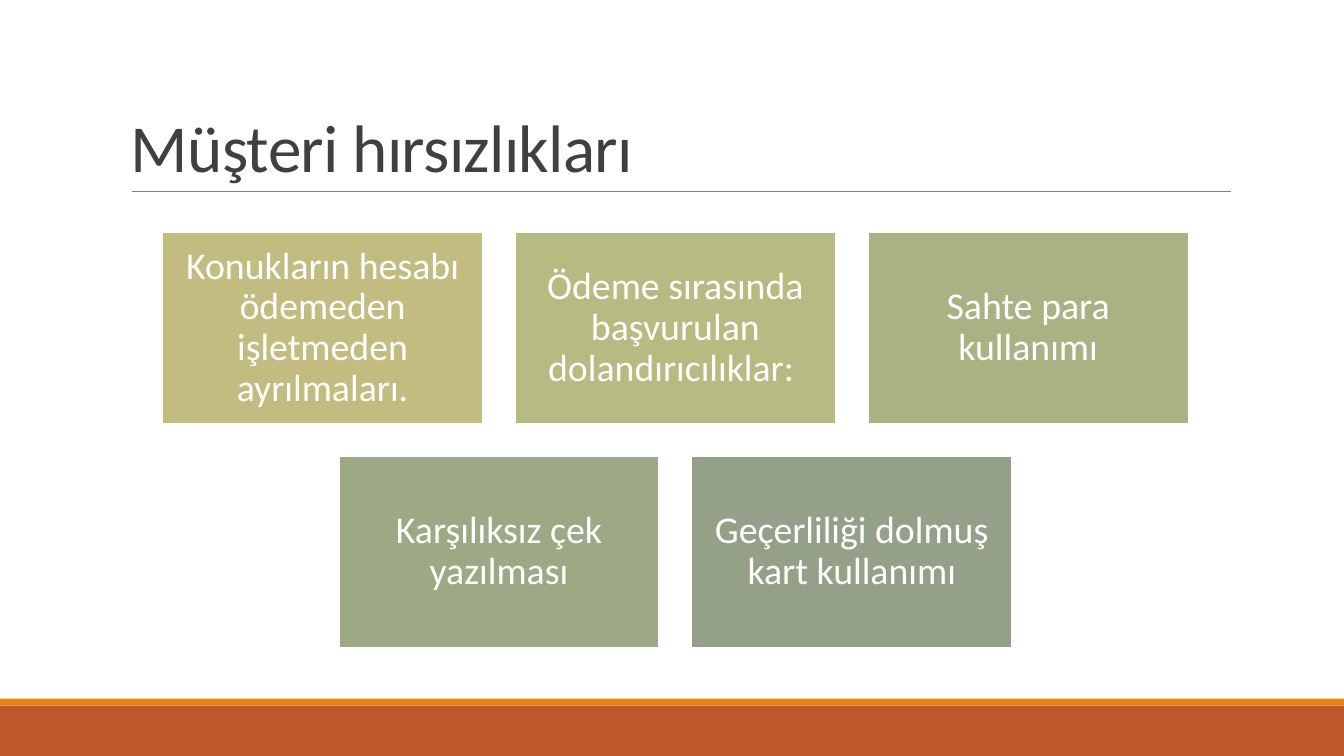
from pptx import Presentation
from pptx.dml.color import RGBColor
from pptx.enum.shapes import MSO_CONNECTOR, MSO_SHAPE
from pptx.enum.text import MSO_ANCHOR, PP_ALIGN
from pptx.oxml.ns import qn
from pptx.util import Pt
from lxml import etree


def rgb(value):
    return RGBColor.from_string(value)


def add_rect(left, top, width, height, fill):
    sp = s.shapes.add_shape(MSO_SHAPE.RECTANGLE, Pt(left), Pt(top), Pt(width), Pt(height))
    sp.shadow.inherit = False
    sp.fill.solid()
    sp.fill.fore_color.rgb = rgb(fill)
    sp.line.fill.background()
    return sp


prs = Presentation()
prs.slide_width, prs.slide_height = Pt(960), Pt(540)
s = prs.slides.add_slide(prs.slide_layouts[6])

# Footer bands
add_rect(0, 504, 960, 36, "BD582C")
add_rect(0, 499, 960, 5, "E48312")

# Title and rule
rule = s.shapes.add_connector(MSO_CONNECTOR.STRAIGHT, Pt(94.3), Pt(136.8), Pt(879), Pt(136.8))
rule.line.color.rgb = rgb("808080")
rule.line.width = Pt(0.5)
etree.SubElement(rule._element.spPr, qn("a:effectLst"))

title = s.shapes.add_textbox(Pt(86.4), Pt(22.5), Pt(792), Pt(114.3))
tf = title.text_frame
tf.word_wrap = True
tf.vertical_anchor = MSO_ANCHOR.BOTTOM
p = tf.paragraphs[0]
p.line_spacing = 0.85
r = p.add_run()
r.text = "Müşteri hırsızlıkları"
r.font.name = "Calibri"
r.font.size = Pt(48)
r.font.color.rgb = rgb("404040")
r._r.get_or_add_rPr().set("spc", "-50")

# Cards: three above, two centred below
CARD_W, CARD_H = 229, 137.5
PITCH_X, PITCH_Y = 252, 160
CENTER_X, TOP = 482.4, 165.6
rows = [
    [("Konukların hesabı ödemeden işletmeden ayrılmaları.", "C2BC80"),
     ("Ödeme sırasında başvurulan dolandırıcılıklar: ", "B7BA81"),
     ("Sahte para kullanımı", "A8B283")],
    [("Karşılıksız çek yazılması", "9DA985"),
     ("Geçerliliği dolmuş kart kullanımı", "94A088")],
]
for i, row in enumerate(rows):
    row_left = CENTER_X - ((len(row) - 1) * PITCH_X + CARD_W) / 2
    for j, (text, fill) in enumerate(row):
        card = add_rect(row_left + j * PITCH_X, TOP + i * PITCH_Y, CARD_W, CARD_H, fill)
        card.line.color.rgb = rgb("FFFFFF")
        card.line.width = Pt(1.25)
        tf = card.text_frame
        tf.word_wrap = True
        tf.vertical_anchor = MSO_ANCHOR.MIDDLE
        tf.margin_left = tf.margin_right = tf.margin_top = tf.margin_bottom = Pt(8)
        p = tf.paragraphs[0]
        p.text = text
        p.alignment = PP_ALIGN.CENTER
        p.line_spacing = 0.9
        p.font.name = "Calibri"
        p.font.size = Pt(27)
        p.font.color.rgb = rgb("FFFFFF")

prs.save("out.pptx")
